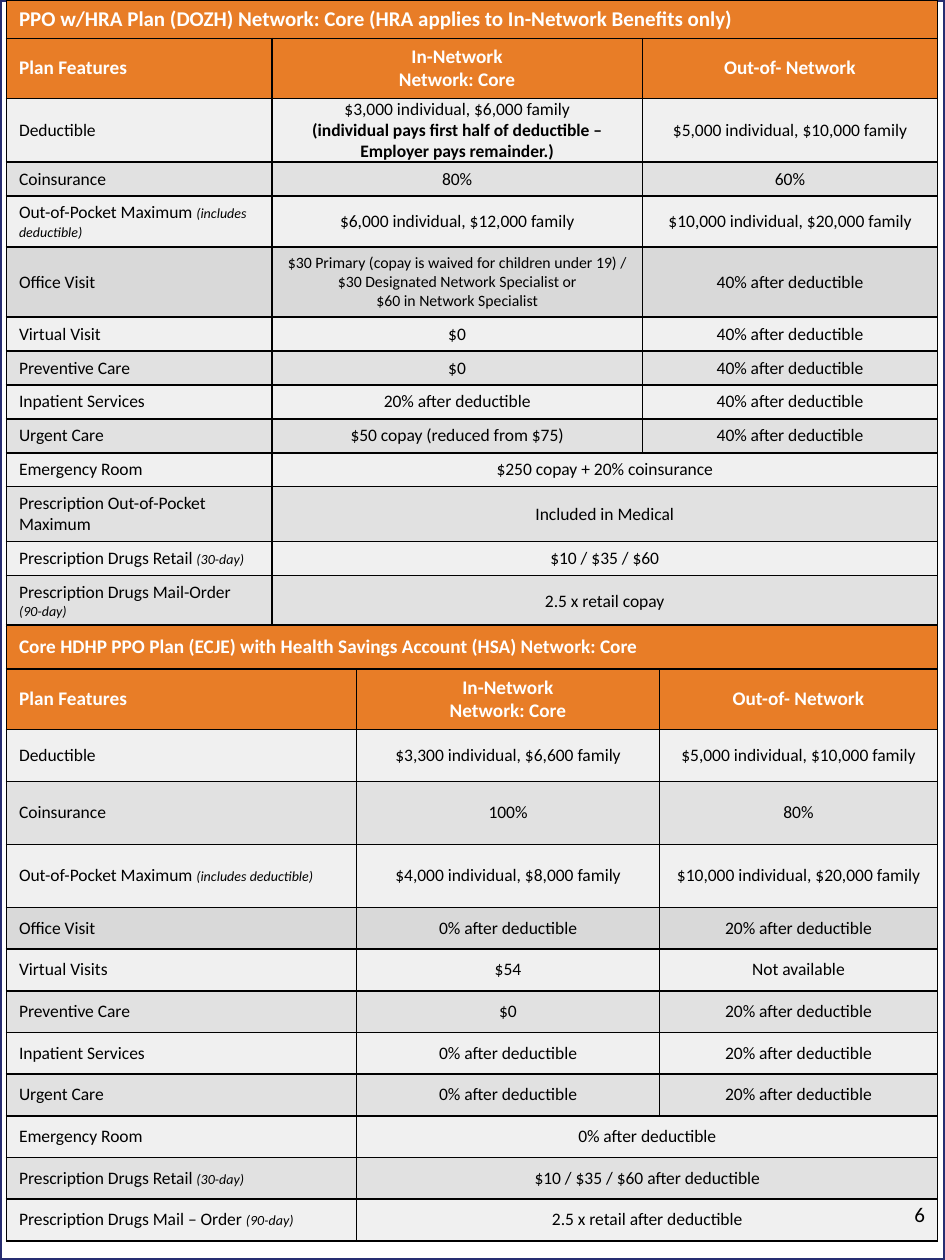
from lxml.etree import SubElement
from pptx import Presentation
from pptx.dml.color import RGBColor
from pptx.enum.shapes import MSO_SHAPE as SHAPE
from pptx.enum.text import MSO_ANCHOR as ANCHOR, PP_ALIGN as ALIGN
from pptx.oxml.ns import qn
from pptx.util import Cm, Pt

FONT = "Calibri"
ORANGE, WHITE, BLACK, NAVY = "E87D27", "FFFFFF", "000000", "282E71"
LIGHT, MID, DARK = "F0F0F0", "E1E1E1", "D9D9D9"
NOTE = dict(size=8, italic=True)
BOLD = dict(bold=True)
SMALL = dict(size=9)

# Content: a cell is a text or a list of paragraphs; a paragraph is a text
# or a list of (text, format) runs. A row of two cells spans both networks.
HEADINGS = ["Plan Features", ["In-Network", "Network: Core"], "Out-of- Network"]
OUT_40 = "40% after deductible"
IN_0, OUT_20 = "0% after deductible", "20% after deductible"
MAXIMUM = [[("Out-of-Pocket Maximum ", {}), ("(includes deductible)", NOTE)]]
RETAIL = [[("Prescription Drugs Retail ", {}), ("(30-day)", NOTE)]]

PLANS = [
    dict(
        title="PPO w/HRA Plan (DOZH) Network: Core (HRA applies to In-Network Benefits only)",
        title_size=12, top=0, cols=[5.35, 7.47, 5.95],
        heights=[0.77, 1.18, 1.28, 0.68, 1.02, 1.4] + [0.68] * 5 + [1.11, 0.68, 1.02],
        rows=[
            ["Deductible",
             ["$3,000 individual, $6,000 family",
              [("(individual pays first half of deductible – Employer pays remainder.)", BOLD)]],
             "$5,000 individual, $10,000 family"],
            ["Coinsurance", "80%", "60%"],
            [MAXIMUM, "$6,000 individual, $12,000 family", "$10,000 individual, $20,000 family"],
            ["Office Visit",
             [[("$30 Primary (copay is waived for children under 19) / "
                "$30 Designated Network Specialist or", SMALL)],
              [("$60 in Network Specialist", SMALL)]],
             OUT_40],
            ["Virtual Visit", "$0", OUT_40],
            ["Preventive Care", "$0", OUT_40],
            ["Inpatient Services", "20% after deductible", OUT_40],
            ["Urgent Care", "$50 copay (reduced from $75)", OUT_40],
            ["Emergency Room", "$250 copay + 20% coinsurance"],
            ["Prescription Out-of-Pocket Maximum", "Included in Medical"],
            [RETAIL, "$10 / $35 / $60"],
            [["Prescription Drugs Mail-Order", [("(90-day)", NOTE)]], "2.5 x retail copay"],
        ]),
    dict(
        title="Core HDHP PPO Plan (ECJE) with Health Savings Account (HSA) Network: Core",
        title_size=11, top=12.6, cols=[7.06, 6.1, 5.61],
        heights=[0.89, 1.18, 1.05, 1.27, 1.27] + [0.84] * 8,
        rows=[
            ["Deductible", "$3,300 individual, $6,600 family", "$5,000 individual, $10,000 family"],
            ["Coinsurance", "100%", "80%"],
            [MAXIMUM, "$4,000 individual, $8,000 family", "$10,000 individual, $20,000 family"],
            ["Office Visit", IN_0, OUT_20],
            ["Virtual Visits", "$54", "Not available"],
            ["Preventive Care", "$0", OUT_20],
            ["Inpatient Services", IN_0, OUT_20],
            ["Urgent Care", IN_0, OUT_20],
            ["Emergency Room", IN_0],
            [RETAIL, "$10 / $35 / $60 after deductible"],
            [[[("Prescription Drugs Mail – Order ", {}), ("(90-day)", NOTE)]],
             "2.5 x retail after deductible"],
        ]),
]


def rgb(color):
    return RGBColor.from_string(color)


def write(tf, content, align=ALIGN.LEFT, **base):
    """Fill a text frame; each run's own format overrides the base."""
    paragraphs = [content] if isinstance(content, str) else content
    for i, runs in enumerate(paragraphs):
        p = tf.paragraphs[0] if i == 0 else tf.add_paragraph()
        p.alignment = align
        for text, fmt in [(runs, {})] if isinstance(runs, str) else runs:
            fmt = {**dict(size=10, bold=False, italic=False, color=BLACK), **base, **fmt}
            r = p.add_run()
            r.text = text
            r.font.name, r.font.size = FONT, Pt(fmt["size"])
            r.font.bold, r.font.italic = fmt["bold"], fmt["italic"]
            r.font.color.rgb = rgb(fmt["color"])


def style_cell(cell, fill):
    """Black 1 pt borders on every side, then the fill."""
    tcPr = cell._tc.get_or_add_tcPr()
    for side in ("lnL", "lnR", "lnT", "lnB"):
        ln = SubElement(tcPr, qn(f"a:{side}"), w=str(Pt(1)))
        SubElement(SubElement(ln, qn("a:solidFill")), qn("a:srgbClr"), val=BLACK)
    cell.fill.solid()
    cell.fill.fore_color.rgb = rgb(fill)
    cell.vertical_anchor = ANCHOR.MIDDLE


def add_plan(s, plan):
    rows = [[plan["title"]], HEADINGS] + plan["rows"]
    cols, heights = plan["cols"], plan["heights"]
    table = s.shapes.add_table(len(rows), len(cols), Cm(0.13), Cm(plan["top"]),
                               Cm(sum(cols)), Cm(sum(heights))).table
    for column, width in zip(table.columns, cols):
        column.width = Cm(width)
    for i, (row, height) in enumerate(zip(rows, heights)):
        table.rows[i].height = Cm(height)
        if i < 2:
            fill = ORANGE
            fmt = dict(size=11 if i else plan["title_size"], bold=True, color=WHITE)
        else:
            fill = DARK if row[0] == "Office Visit" else (LIGHT, MID)[i % 2]
            fmt = {}
        for j in range(len(cols)):
            style_cell(table.cell(i, j), fill)
        if len(row) < len(cols):
            table.cell(i, len(row) - 1).merge(table.cell(i, len(cols) - 1))
        for j, content in enumerate(row):
            cell = table.cell(i, j)
            if j and 2 <= i <= 4:  # deductible to out-of-pocket: tight margins
                cell.margin_left = cell.margin_right = Cm(0.15)
                cell.margin_top = cell.margin_bottom = 0
            write(cell.text_frame, content, ALIGN.CENTER if j else ALIGN.LEFT, **fmt)


prs = Presentation()
prs.slide_width, prs.slide_height = Cm(19.05), Cm(25.4)
s = prs.slides.add_slide(prs.slide_layouts[6])

# Page frame
frame = s.shapes.add_shape(SHAPE.RECTANGLE, 0, 0, prs.slide_width, prs.slide_height)
frame.shadow.inherit = False
frame.fill.background()
frame.line.color.rgb = rgb(NAVY)
frame.line.width = Pt(2.5)

# Plan tables
for plan in PLANS:
    add_plan(s, plan)

# Page number
tf = s.shapes.add_textbox(Cm(14.6), Cm(24.1), Cm(4.3), Cm(1.3)).text_frame
tf.word_wrap = True
write(tf, "6", ALIGN.RIGHT, size=12)

prs.save("out.pptx")
